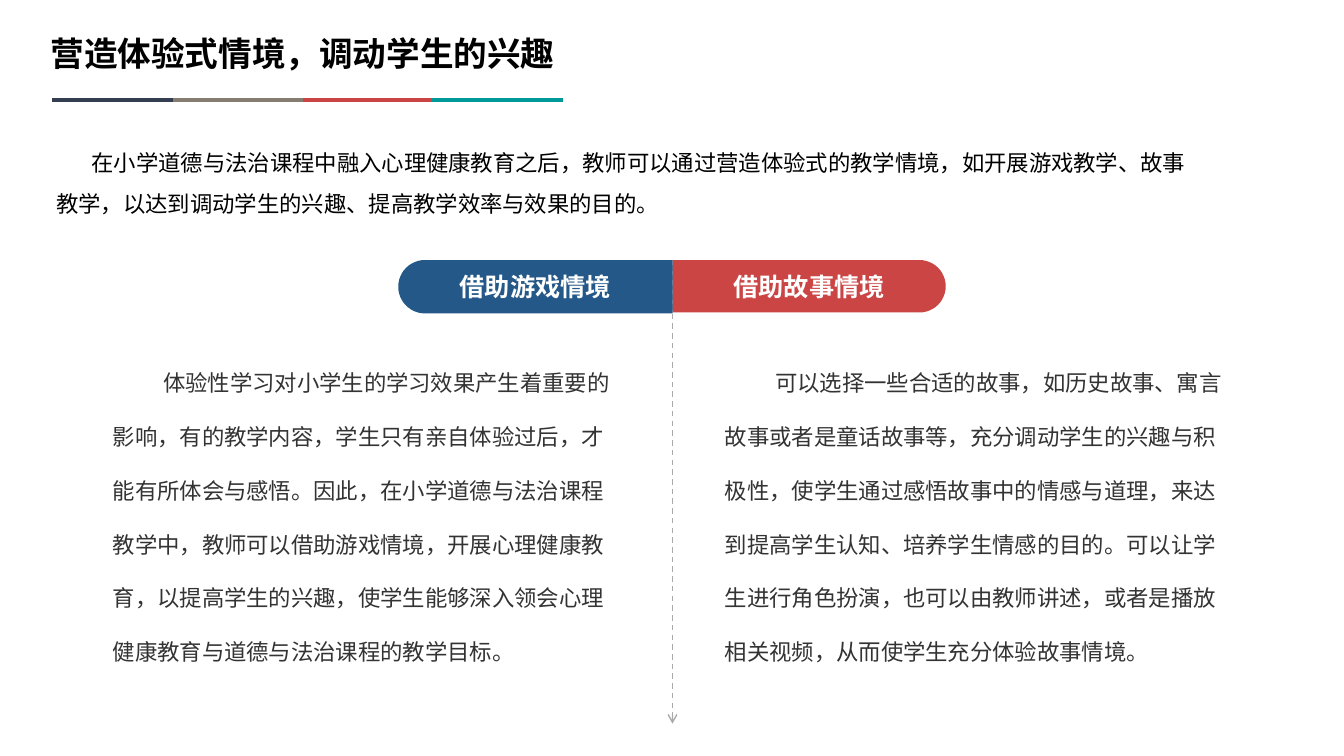
from dataclasses import dataclass
from math import cos, pi, sin

from lxml.etree import SubElement
from pptx import Presentation
from pptx.dml.color import RGBColor
from pptx.enum.dml import MSO_LINE_DASH_STYLE as DASH
from pptx.enum.shapes import MSO_CONNECTOR as CONN
from pptx.enum.text import MSO_ANCHOR as ANCHOR, PP_ALIGN as ALIGN
from pptx.oxml.ns import qn
from pptx.util import Inches, Pt

FONT = "Noto Sans CJK SC"
CENTER = 6.67
ARC_STEPS = 24


@dataclass
class Passage:
    left: float
    top: float
    width: float
    height: float
    indent: float
    spacing: float
    color: str
    text: str


@dataclass
class Tab:
    outer: float
    height: float
    color: str
    text: str


@dataclass
class Stripe:
    left: float
    color: str


PASSAGES = [
    Passage(0.46, 1.3, 11.6, 0.86, 0.35, 1.5, "000000",
            "在小学道德与法治课程中融入心理健康教育之后，教师可以通过营造体验式的教学情境，"
            "如开展游戏教学、故事教学，以达到调动学生的兴趣、提高教学效率与效果的目的。"),
    Passage(1.02, 3.35, 5.24, 3.25, 0.5, 2.0, "333333",
            "体验性学习对小学生的学习效果产生着重要的影响，有的教学内容，学生只有亲自体验过后，"
            "才能有所体会与感悟。因此，在小学道德与法治课程教学中，教师可以借助游戏情境，"
            "开展心理健康教育，以提高学生的兴趣，使学生能够深入领会心理健康教育与道德与法治课程的教学目标。"),
    Passage(7.09, 3.35, 5.28, 3.25, 0.5, 2.0, "333333",
            "可以选择一些合适的故事，如历史故事、寓言故事或者是童话故事等，充分调动学生的兴趣与积极性，"
            "使学生通过感悟故事中的情感与道理，来达到提高学生认知、培养学生情感的目的。"
            "可以让学生进行角色扮演，也可以由教师讲述，或者是播放相关视频，从而使学生充分体验故事情境。"),
]
TABS = [
    Tab(9.38, 0.52, "CB4545", "借助故事情境"),
    Tab(3.95, 0.53, "235888", "借助游戏情境"),
]
STRIPES = [
    Stripe(0.52, "333F50"),
    Stripe(1.72, "857D72"),
    Stripe(3.01, "CB4545"),
    Stripe(4.28, "009999"),
]


def rgb(color: str) -> RGBColor:
    return RGBColor.from_string(color)


def add_run(p, text: str, size: float, color: str, bold: bool = False) -> None:
    r = p.add_run()
    r.text = text
    r.font.size = Pt(size)
    r.font.bold = bold
    r.font.color.rgb = rgb(color)
    r.font.name = FONT
    SubElement(r.font._element, qn("a:ea"), typeface=FONT)


def add_line(slide, x1: float, y1: float, x2: float, y2: float, color: str, width: float):
    line = slide.shapes.add_connector(CONN.STRAIGHT, Inches(x1), Inches(y1), Inches(x2), Inches(y2))
    line.line.color.rgb = rgb(color)
    line.line.width = Pt(width)
    SubElement(line._element.spPr, qn("a:effectLst"))
    return line


def add_divider(slide) -> None:
    line = add_line(slide, CENTER, 2.63, CENTER, 7.18, "AAAAAA", 1)
    line.line.dash_style = DASH.DASH
    SubElement(line.line._get_or_add_ln(), qn("a:tailEnd"), type="arrow")


def add_tab(slide, tab: Tab) -> None:
    top, radius = 2.58, tab.height / 2
    side = 1 if tab.outer > CENTER else -1
    arc_x = tab.outer - side * radius
    angles = [pi * i / ARC_STEPS - pi / 2 for i in range(ARC_STEPS + 1)]
    points = [(arc_x + side * radius * cos(a), top + radius + radius * sin(a)) for a in angles]
    points.append((CENTER, top + tab.height))
    builder = slide.shapes.build_freeform(Inches(CENTER), Inches(top))
    builder.add_line_segments([(Inches(x), Inches(y)) for x, y in points], close=True)
    sp = builder.convert_to_shape()
    sp.shadow.inherit = False
    sp.fill.solid()
    sp.fill.fore_color.rgb = rgb(tab.color)
    sp.line.fill.background()
    tf = sp.text_frame
    tf.vertical_anchor = ANCHOR.MIDDLE
    p = tf.paragraphs[0]
    p.alignment = ALIGN.CENTER
    add_run(p, tab.text, 18, "FFFFFF", True)


def add_title(slide, text: str) -> None:
    sp = slide.shapes.title
    sp.left, sp.top, sp.width, sp.height = Inches(0.4), Inches(0.28), Inches(5.25), Inches(0.5)
    tf = sp.text_frame
    tf.word_wrap = False
    tf.vertical_anchor = ANCHOR.TOP
    p = tf.paragraphs[0]
    p.alignment = ALIGN.LEFT
    add_run(p, text, 24, "000000", True)


def add_passage(slide, item: Passage) -> None:
    sp = slide.shapes.add_textbox(Inches(item.left), Inches(item.top),
                                  Inches(item.width), Inches(item.height))
    tf = sp.text_frame
    tf.word_wrap = True
    p = tf.paragraphs[0]
    p.line_spacing = item.spacing
    p._p.get_or_add_pPr().set("indent", str(Inches(item.indent)))
    add_run(p, item.text, 16, item.color)


def main() -> None:
    prs = Presentation()
    prs.slide_width, prs.slide_height = Inches(13.33), Inches(7.5)
    slide = prs.slides.add_slide(prs.slide_layouts[5])
    add_title(slide, "营造体验式情境，调动学生的兴趣")
    add_divider(slide)
    for tab in TABS:
        add_tab(slide, tab)
    for stripe in STRIPES:
        add_line(slide, stripe.left, 0.99, stripe.left + 1.3, 0.99, stripe.color, 3)
    for item in PASSAGES:
        add_passage(slide, item)
    prs.save("out.pptx")


if __name__ == "__main__":
    main()
